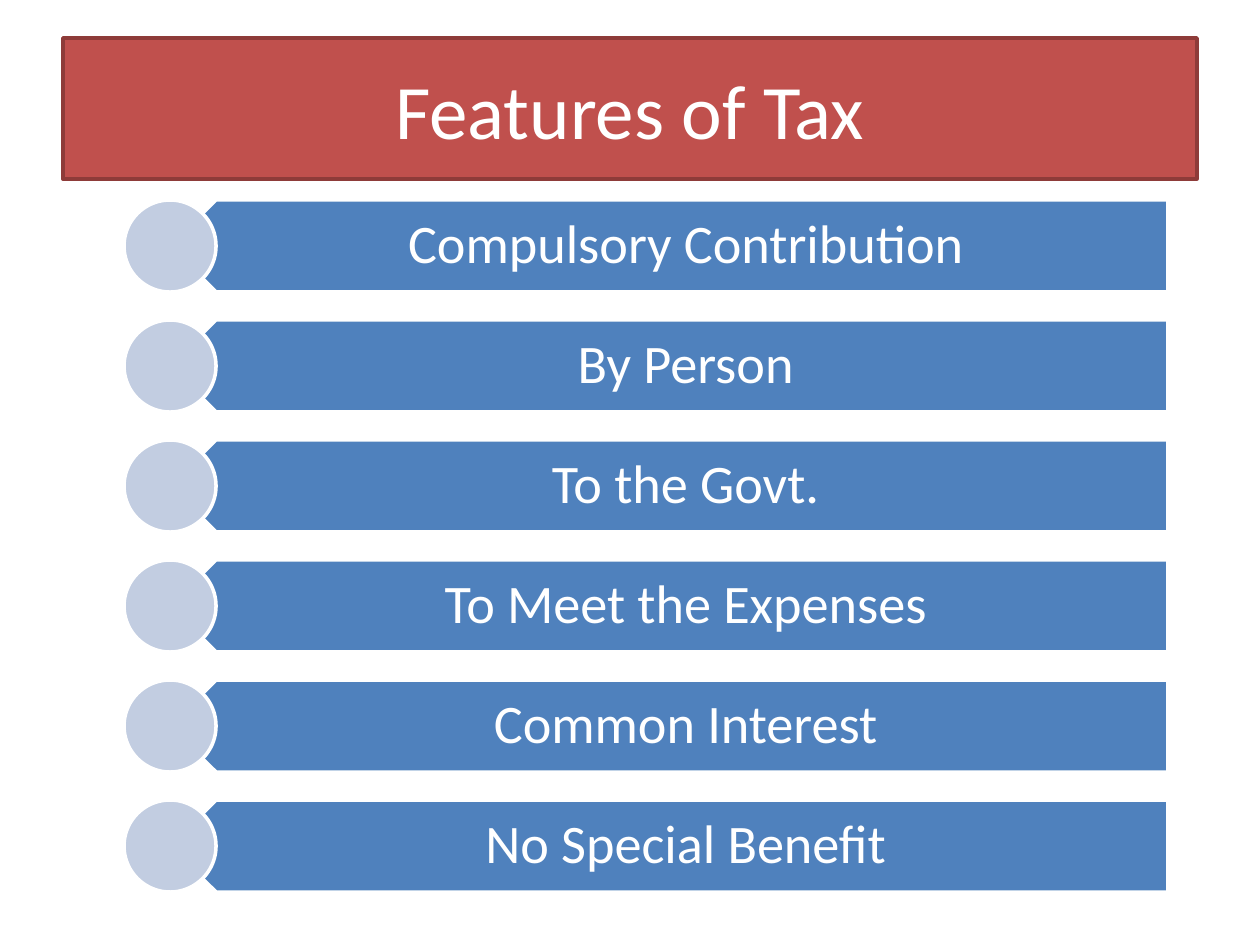
from pptx import Presentation
from pptx.dml.color import RGBColor
from pptx.enum.shapes import MSO_SHAPE
from pptx.enum.text import MSO_ANCHOR, PP_ALIGN
from pptx.util import Pt

PX = 914400 / 126
COLORS = {
    "title": "C0504D",
    "title line": "8E3B39",
    "bar": "4F81BD",
    "dot": "C2CDE1",
    "white": "FFFFFF",
}
FEATURES = [
    "Compulsory Contribution",
    "By Person",
    "To the Govt.",
    "To Meet the Expenses",
    "Common Interest",
    "No Special Benefit",
]
ROW_TOP, ROW_STEP, ROW_HEIGHT = 200, 120, 92


def px(*lengths):
    return [round(length * PX) for length in lengths]


def format_shape(shape, text=None, fill=None, line=None, size=31, spacing=None):
    if fill:
        shape.shadow.inherit = False
        shape.fill.solid()
        shape.fill.fore_color.rgb = RGBColor.from_string(COLORS[fill])
        shape.line.color.rgb = RGBColor.from_string(COLORS[line])
        shape.line.width = Pt(2)
    if text:
        frame = shape.text_frame
        frame.word_wrap = True
        frame.vertical_anchor = MSO_ANCHOR.MIDDLE
        para = frame.paragraphs[0]
        para.alignment = PP_ALIGN.CENTER
        if spacing:
            para.line_spacing = spacing
        span = para.add_run()
        span.text = text
        span.font.name = "Calibri"
        span.font.size = Pt(size)
        span.font.color.rgb = RGBColor.from_string(COLORS["white"])


deck = Presentation()
deck.slide_width, deck.slide_height = px(1260, 945)
page = deck.slides.add_slide(deck.slide_layouts[5])

# Title banner
title = page.shapes.title
title.left, title.top, title.width, title.height = px(63, 38, 1134, 141)
format_shape(title, "Features of Tax", fill="title", line="title line", size=44)

# Feature list: a bar, its label and a dot in each row
rows = page.shapes.add_group_shape().shapes
for index, feature in enumerate(FEATURES):
    top = ROW_TOP + index * ROW_STEP

    bar = rows.add_shape(MSO_SHAPE.PENTAGON, *px(170, top, 998, ROW_HEIGHT))
    bar.rotation = 180
    format_shape(bar, fill="bar", line="white")

    label = rows.add_textbox(*px(193, top, 975, ROW_HEIGHT))
    format_shape(label, feature, spacing=0.9)
    frame = label.text_frame
    frame.margin_left, frame.margin_right = px(40, 30)
    frame.margin_top, frame.margin_bottom = px(16, 16)

    dot = rows.add_shape(MSO_SHAPE.OVAL, *px(124, top, ROW_HEIGHT, ROW_HEIGHT))
    format_shape(dot, fill="dot", line="white")

deck.save("out.pptx")
